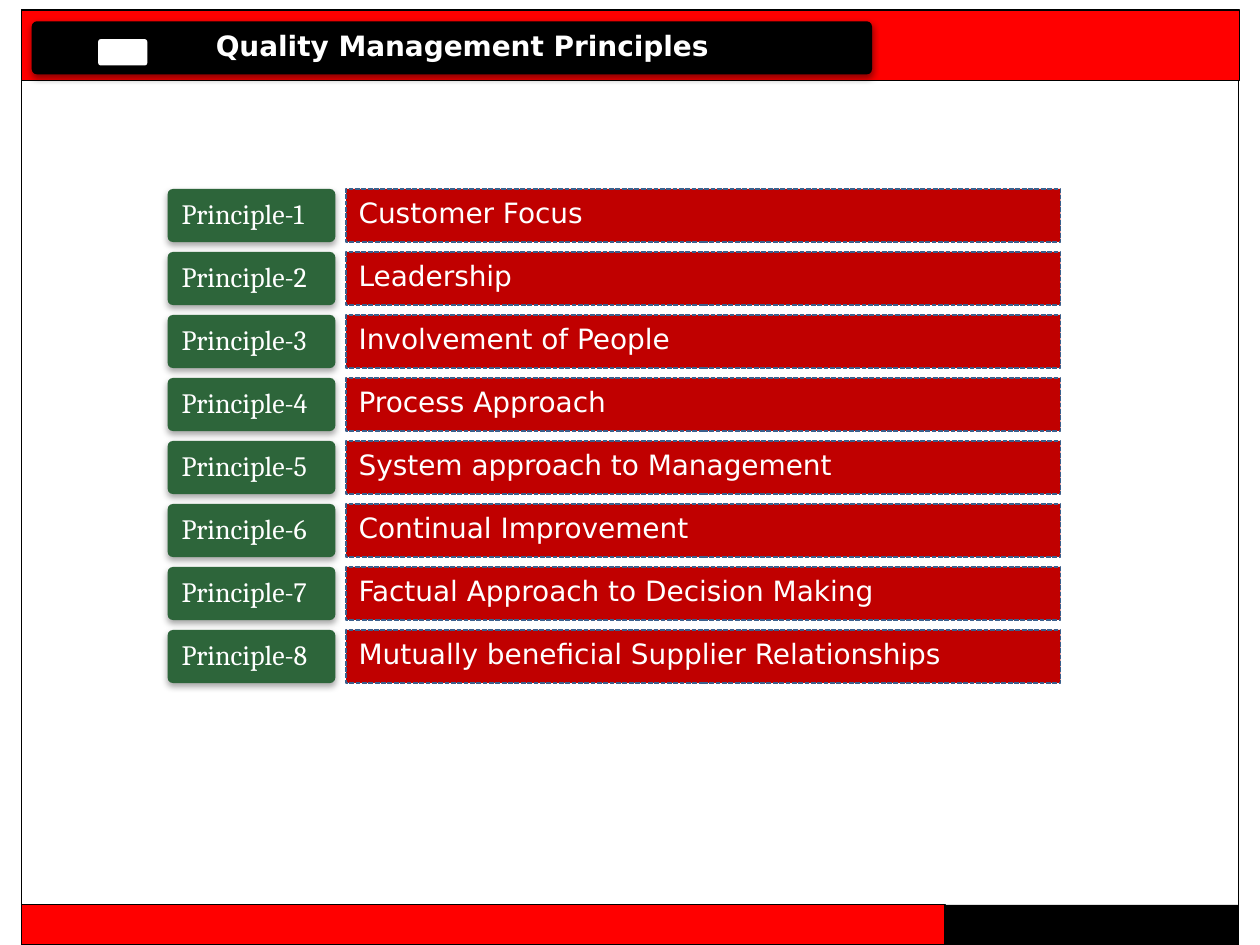
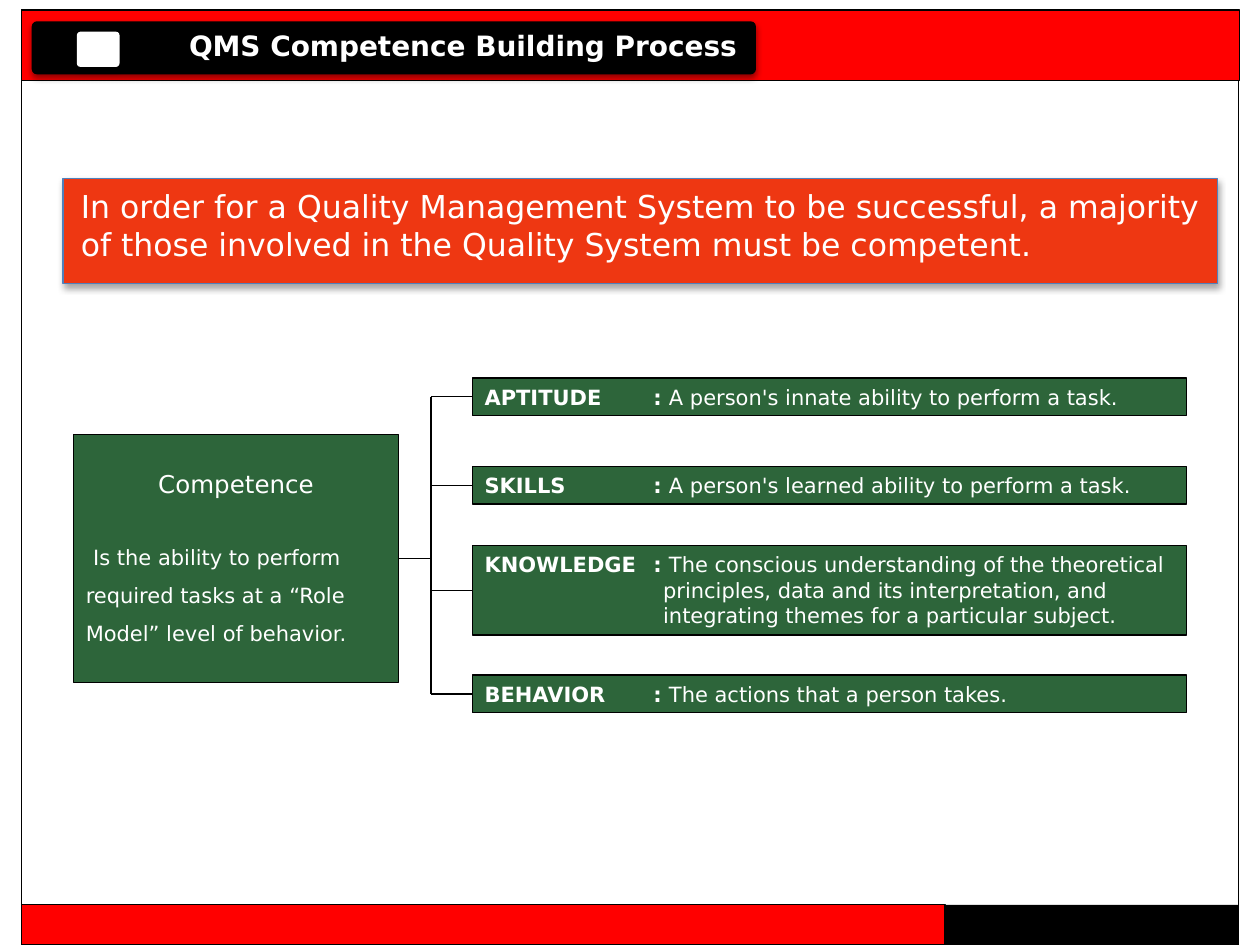
import pptx
import pptx.util
import pptx.dml.color
import pptx.enum.dml
import pptx.enum.shapes
import pptx.enum.text
import pptx.oxml
import pptx.oxml.ns

Cm, Pt = pptx.util.Cm, pptx.util.Pt
SHAPE = pptx.enum.shapes.MSO_SHAPE
ANCHOR = pptx.enum.text.MSO_ANCHOR
ALIGN = pptx.enum.text.PP_ALIGN
NS = pptx.oxml.ns.nsdecls("a")

COLORS = {
    "white": "FFFFFF",
    "black": "000000",
    "band": "FF0000",
    "label": "2D653A",
    "bar": "C00000",
    "bar_edge": "3A5F8C",
    "statement": "EE3712",
    "statement_edge": "4F81BD",
}
SANS, SERIF = "DejaVu Sans", "Cambria"

PRINCIPLES = [
    "Customer Focus",
    "Leadership",
    "Involvement of People",
    "Process Approach",
    "System approach to Management",
    "Continual Improvement",
    "Factual Approach to Decision Making",
    "Mutually beneficial Supplier Relationships",
]

# Term, top, height (cm), lines of the definition
FACTORS = [
    ("APTITUDE", 7.62, 0.76, ["A person's innate ability to perform a task."]),
    ("SKILLS", 11.83 - 2.43, 0.76, ["A person's learned ability to perform a task."]),
    ("KNOWLEDGE", 11, 1.8, [
        "The conscious understanding of the theoretical",
        "principles, data and its interpretation, and",
        "integrating themes for a particular subject.",
    ]),
    ("BEHAVIOR", 13.61, 0.76, ["The actions that a person takes."]),
]


def rgb(name):
    return pptx.dml.color.RGBColor.from_string(COLORS[name])


# Elements
def add_shadow(s, opacity):
    effects = s.element.spPr.find(pptx.oxml.ns.qn("a:effectLst"))
    effects.append(pptx.oxml.parse_xml(
        f'<a:outerShdw {NS} blurRad="{Pt(4)}" dist="{Pt(2)}" dir="5400000" '
        f'rotWithShape="0"><a:srgbClr val="{COLORS["black"]}">'
        f'<a:alpha val="{opacity * 1000}"/></a:srgbClr></a:outerShdw>'))


def add_box(slide, at, fill=None, line=None, width=0.75, rounded=False, shadow=0):
    kind = SHAPE.ROUNDED_RECTANGLE if rounded else SHAPE.RECTANGLE
    s = slide.shapes.add_shape(kind, *map(Cm, at))
    s.shadow.inherit = False
    if rounded:
        s.adjustments[0] = 0.1
    if fill:
        s.fill.solid()
        s.fill.fore_color.rgb = rgb(fill)
    else:
        s.fill.background()
    if line:
        s.line.color.rgb = rgb(line)
        s.line.width = Pt(width)
    else:
        s.line.fill.background()
    if shadow:
        add_shadow(s, shadow)
    tf = s.text_frame
    tf.word_wrap = True
    tf.vertical_anchor = ANCHOR.TOP
    tf.paragraphs[0].alignment = ALIGN.LEFT
    return s


def add_run(p, text, size, font=SANS, bold=False):
    r = p.add_run()
    r.text = text
    r.font.name = font
    r.font.size = Pt(size)
    r.font.bold = bold
    r.font.color.rgb = rgb("white")


def add_paragraph(tf):
    p = tf.add_paragraph()
    p.alignment = ALIGN.LEFT
    return p


def add_line(slide, start, end):
    c = slide.shapes.add_connector(
        pptx.enum.shapes.MSO_CONNECTOR.STRAIGHT, *map(Cm, start + end))
    c.line.color.rgb = rgb("black")
    c.line.width = Pt(0.75)
    c.element.spPr.append(pptx.oxml.parse_xml(f"<a:effectLst {NS}/>"))
    return c


# Frame and bands shared by all slides, kept on the layout
def add_frame(slide):
    frame = [
        add_box(slide, (0.43, 0.2, 24.54, 18.85), line="black"),
        add_box(slide, (0.43, 0.2, 24.56, 1.42), "band", "black"),
        add_box(slide, (0.43, 18.24, 18.62, 0.81), "band", "black"),
        add_box(slide, (19.05, 18.24, 5.92, 0.81), "black"),
    ]
    for number, s in enumerate(frame, 101):
        s.element.nvSpPr.cNvPr.set("id", str(number))
        slide.slide_layout.shapes.element.append(s.element)


def add_title(slide, text, plate_width, left, inset, icon_at):
    add_box(slide, (0.64, 0.43, plate_width, 1.07), "black", rounded=True, shadow=45)
    add_box(slide, icon_at, "white", rounded=True, shadow=35)
    title = slide.shapes.title
    slide.shapes.element.append(title.element)  # bring in front of its plate
    title.left, title.top = Cm(left), Cm(0.43)
    title.width, title.height = Cm(0.64 + plate_width - left), Cm(1.07)
    tf = title.text_frame
    tf.auto_size = pptx.enum.text.MSO_AUTO_SIZE.NONE
    tf.word_wrap = True
    tf.vertical_anchor = ANCHOR.MIDDLE
    tf.margin_left = tf.margin_right = tf.margin_top = tf.margin_bottom = Cm(inset)
    p = tf.paragraphs[0]
    p.alignment = ALIGN.LEFT
    p.line_spacing = 0.9
    add_run(p, text, 16, bold=True)


# Quality management principles
def add_principle(slide, number, text):
    top = 3.81 + 1.27 * (number - 1)
    label = add_box(slide, (3.38, top, 3.38, 1.07), "label", rounded=True, shadow=35)
    add_run(label.text_frame.paragraphs[0], f"Principle-{number}", 16, SERIF)
    bar = add_box(slide, (6.98, top, 14.4, 1.07), "bar", "bar_edge", 0.9)
    bar.line.dash_style = pptx.enum.dml.MSO_LINE.SQUARE_DOT
    add_run(bar.text_frame.paragraphs[0], text, 16)


# Competence building
def add_statement(slide, text):
    s = add_box(slide, (1.27, 3.6, 23.28, 2.12), "statement", "statement_edge", shadow=35)
    tf = s.text_frame
    tf.margin_left = tf.margin_right = Cm(0.36)
    tf.margin_top = tf.margin_bottom = Cm(0.18)
    tf.paragraphs[0].alignment = ALIGN.JUSTIFY
    add_run(tf.paragraphs[0], text, 18)


def add_competence(slide):
    s = add_box(slide, (1.48, 8.76, 6.56, 5), "label", "black")
    tf = s.text_frame
    tf.margin_top = Cm(0.7)
    p = tf.paragraphs[0]
    p.alignment = ALIGN.CENTER
    add_run(p, "Competence", 14)
    p = add_paragraph(tf)
    p.line_spacing = 1.5
    p.space_before = Pt(19)
    p._p.get_or_add_pPr().set("indent", str(Cm(0.15)))
    add_run(p, "Is the ability to perform required tasks at a “Role Model” "
               "level of behavior.", 12)
    return s


def add_factor(slide, term, top, height, lines):
    s = add_box(slide, (9.52, top, 14.4, height), "label", "black")
    tf = s.text_frame
    p = tf.paragraphs[0]
    p._p.get_or_add_pPr().append(pptx.oxml.parse_xml(
        f'<a:tabLst {NS}><a:tab pos="{Cm(3.4)}" algn="l"/></a:tabLst>'))
    add_run(p, f"{term}\t: ", 12, bold=True)
    add_run(p, lines[0], 12)
    for line in lines[1:]:
        p = add_paragraph(tf)
        p._p.get_or_add_pPr().set("marL", str(Cm(3.6)))
        add_run(p, line, 12)
    return s


def add_tree(slide):
    trunk_x = 8.69
    competence = add_competence(slide)
    middles = []
    for term, top, height, lines in FACTORS:
        factor = add_factor(slide, term, top, height, lines)
        y = top + height / 2
        branch = add_line(slide, (trunk_x, y), (9.52, y))
        branch.end_connect(factor, 1)
        middles.append(y)
    add_line(slide, (trunk_x, middles[0]), (trunk_x, middles[-1]))
    stem = add_line(slide, (8.04, 11.26), (trunk_x, 11.26))
    stem.begin_connect(competence, 3)


def main():
    prs = pptx.Presentation()
    prs.slide_width, prs.slide_height = Cm(25.4), Cm(19.05)
    title_only = prs.slide_layouts[5]

    slide = prs.slides.add_slide(title_only)
    add_frame(slide)
    add_title(slide, "Quality Management Principles", 16.94, 4.17, 0.18,
              (1.98, 0.79, 0.99, 0.53))
    for number, text in enumerate(PRINCIPLES, 1):
        add_principle(slide, number, text)

    slide = prs.slides.add_slide(title_only)
    add_title(slide, "QMS Competence Building Process", 14.6, 3.68, 0.13,
              (1.55, 0.64, 0.86, 0.71))
    add_statement(slide, "In order for a Quality Management System to be successful, "
                         "a majority of those involved in the Quality System "
                         "must be competent.")
    add_tree(slide)

    prs.save("out.pptx")


if __name__ == "__main__":
    main()
